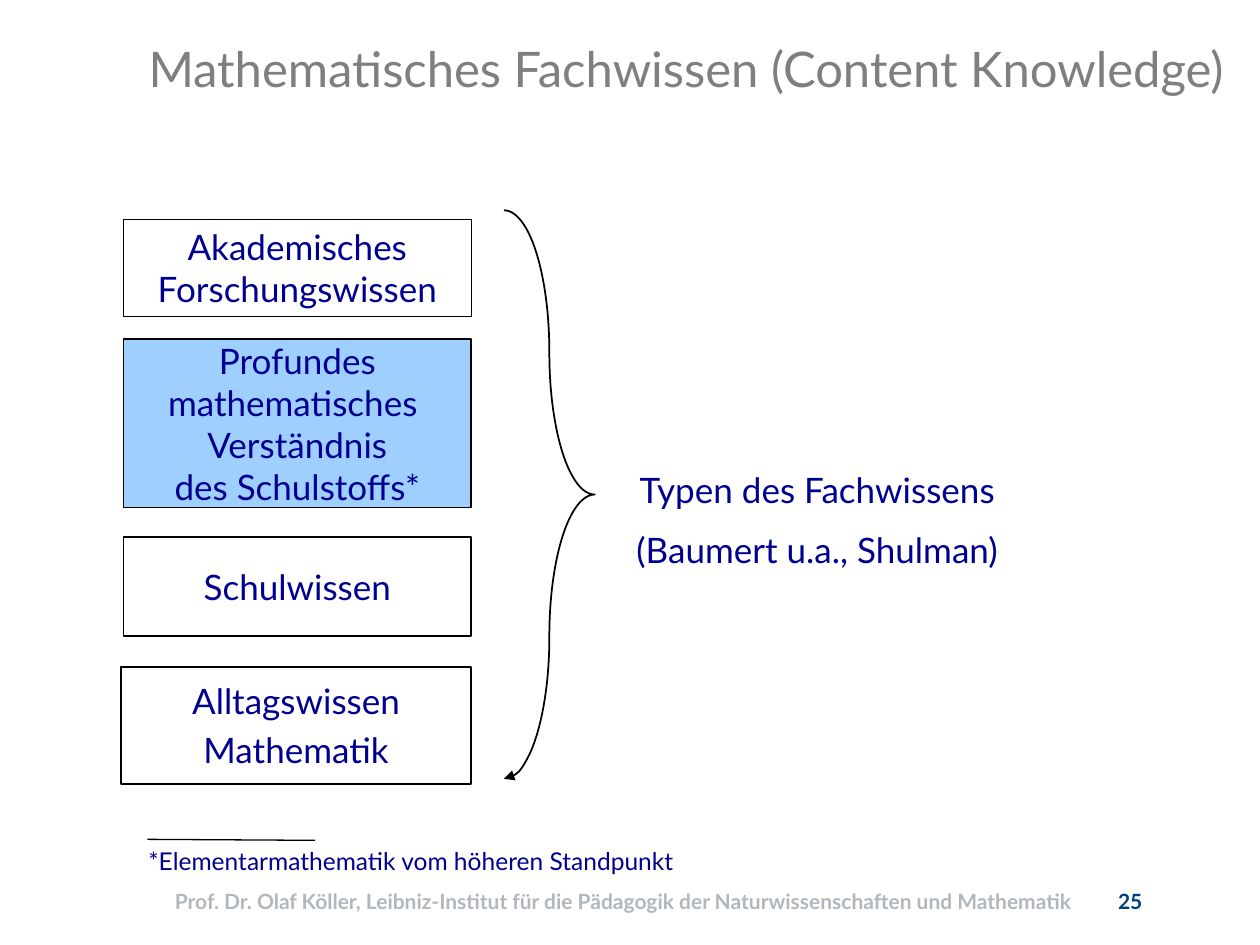
import pptx
import pptx.util
import pptx.dml.color
import pptx.enum.shapes
import pptx.enum.text
import pptx.oxml.ns
from lxml import etree

Cm, Pt = pptx.util.Cm, pptx.util.Pt
RGB = pptx.dml.color.RGBColor.from_string
ALIGN = pptx.enum.text.PP_ALIGN
ANCHOR = pptx.enum.text.MSO_ANCHOR
SHAPE = pptx.enum.shapes.MSO_SHAPE
qn = pptx.oxml.ns.qn

# Content: positions in cm as left, top, width, height
TITLE = ("Mathematisches Fachwissen (Content Knowledge)", (2.74, 0.64, 22.66, 2.64))
# lines, position, fill, line width, anchor, space between lines
BOXES = [
    (["Akademisches", "Forschungswissen"],
     (2.49, 4.42, 7.01, 1.96), None, 0.75, ANCHOR.TOP, 0),
    (["Profundes", "mathematisches ", "Verständnis", "des Schulstoffs*"],
     (2.49, 6.83, 7.01, 3.4), "highlight", 1, ANCHOR.MIDDLE, 0),
    (["Schulwissen"],
     (2.49, 10.82, 7.01, 2.01), None, 1, ANCHOR.MIDDLE, 0),
    (["Alltagswissen", "Mathematik"],
     (2.44, 13.44, 7.06, 2.36), None, 1, ANCHOR.MIDDLE, 4),
]
# lines, position, style, alignment, anchor, space between lines
TEXTS = [
    (["Typen des Fachwissens", "(Baumert u.a., Shulman)"],
     (10.8, 9.32, 11.35, 2.39), "body", ALIGN.CENTER, ANCHOR.TOP, 10),
    (["*Elementarmathematik vom höheren Standpunkt"],
     (2.74, 16.94, 11.86, 0.86), "note", ALIGN.LEFT, ANCHOR.TOP, 0),
    (["Prof. Dr. Olaf Köller, Leibniz-Institut für die Pädagogik der "
      "Naturwissenschaften und Mathematik"],
     (2.92, 17.65, 19.3, 1.02), "footer", ALIGN.CENTER, ANCHOR.MIDDLE, 0),
    (["25"], (22.2, 17.65, 1.17, 1.02), "number", ALIGN.CENTER, ANCHOR.MIDDLE, 0),
]
BRACE = (10.16, 4.24, 1.83, 11.46)
NOTE_RULE = (2.97, 16.92, 6.35, 16.94)

# Theme: size, colour, bold
THEME = {
    "font": "Lato",
    "line": "000000",
    "highlight": "9FCFFF",
    "title": (28, "7F7F7F", False),
    "body": (20, "000090", False),
    "note": (14, "000090", False),
    "footer": (12, "B0B7BD", True),
    "number": (12, "003F7D", True),
}


def cm(values):
    return [Cm(v) for v in values]


def write(tf, lines, style, align, anchor, gap=0, wrap=True):
    size, color, bold = THEME[style]
    tf.word_wrap = wrap
    tf.auto_size = pptx.enum.text.MSO_AUTO_SIZE.NONE
    tf.vertical_anchor = anchor
    for i, line in enumerate(lines):
        p = tf.paragraphs[0] if i == 0 else tf.add_paragraph()
        p.alignment = align
        p.space_before = Pt(gap if i else 0)
        r = p.add_run()
        r.text = line
        r.font.name = THEME["font"]
        r.font.size = Pt(size)
        r.font.bold = bold
        r.font.color.rgb = RGB(color)


def outline(sp, width):
    sp.line.color.rgb = RGB(THEME["line"])
    sp.line.width = Pt(width)


def add_shape(s, kind, box, fill, width):
    sp = s.shapes.add_shape(kind, *cm(box))
    sp.shadow.inherit = False
    if fill:
        sp.fill.solid()
        sp.fill.fore_color.rgb = RGB(THEME[fill])
    else:
        sp.fill.background()
    outline(sp, width)
    return sp


def main():
    prs = pptx.Presentation()
    prs.slide_width, prs.slide_height = Cm(25.4), Cm(19.05)
    s = prs.slides.add_slide(prs.slide_layouts[5])

    # Title
    text, box = TITLE
    title = s.shapes.title
    title.left, title.top, title.width, title.height = cm(box)
    write(title.text_frame, [text], "title", ALIGN.LEFT, ANCHOR.TOP)

    # Knowledge levels
    for lines, box, fill, width, anchor, gap in BOXES:
        sp = add_shape(s, SHAPE.RECTANGLE, box, fill, width)
        write(sp.text_frame, lines, "body", ALIGN.CENTER, anchor, gap, wrap=False)

    # Brace with an arrowhead at its lower end
    brace = add_shape(s, SHAPE.RIGHT_BRACE, BRACE, None, 1)
    brace.adjustments[0] = 1.56
    brace.adjustments[1] = 0.5
    etree.SubElement(brace.line._get_or_add_ln(), qn("a:tailEnd"), type="triangle")

    # Label, footnote and footer
    for lines, box, style, align, anchor, gap in TEXTS:
        sp = s.shapes.add_textbox(*cm(box))
        write(sp.text_frame, lines, style, align, anchor, gap)

    # Rule above the footnote
    rule = s.shapes.add_connector(
        pptx.enum.shapes.MSO_CONNECTOR.STRAIGHT, *cm(NOTE_RULE))
    outline(rule, 0.75)
    etree.SubElement(rule._element.spPr, qn("a:effectLst"))

    prs.save("out.pptx")


if __name__ == "__main__":
    main()
